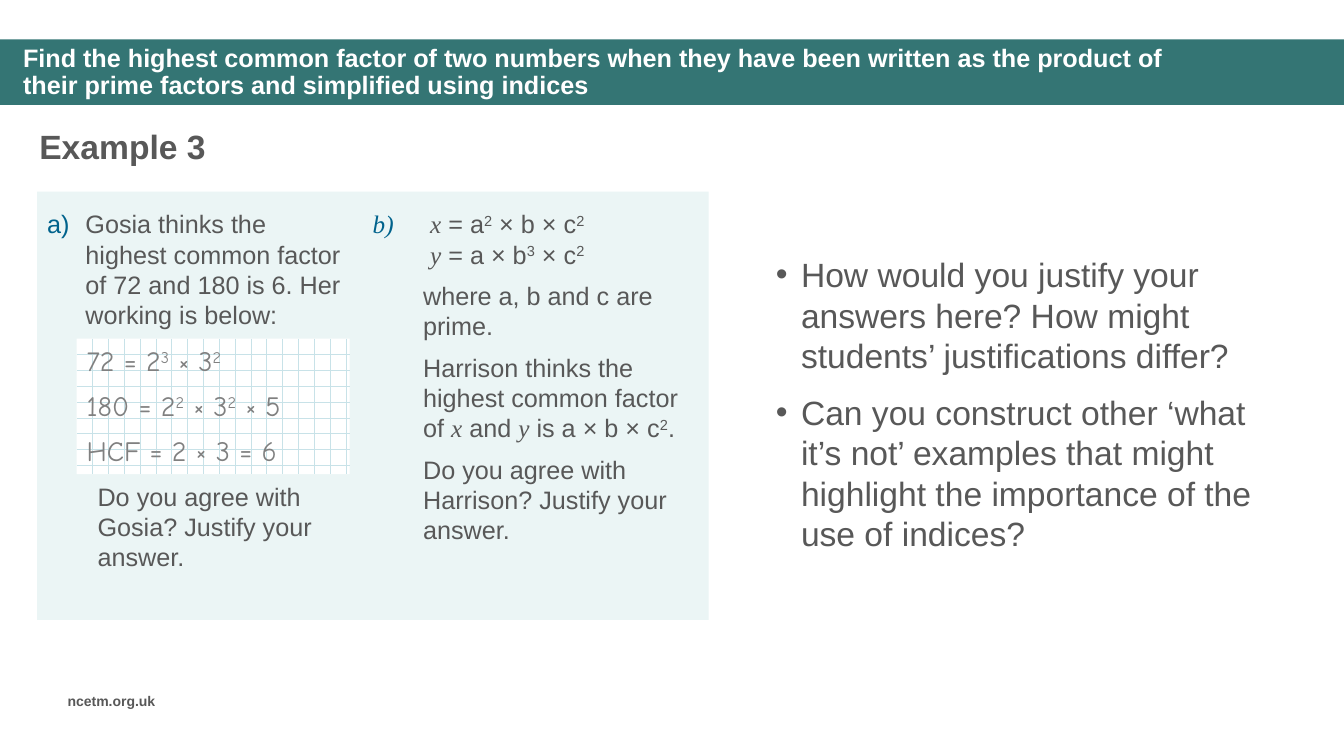
from dataclasses import dataclass

from lxml import etree
from pptx import Presentation
from pptx import util as u
from pptx.dml.color import RGBColor
from pptx.enum import dml, shapes, text
from pptx.oxml.ns import qn

COLUMNS, ROWS = 128, 72
WIDTH, HEIGHT = u.Inches(13.33), u.Inches(7.5)
GREY, TEAL, PALE, LABEL = "585858", "347574", "EBF5F5", "00628C"


@dataclass
class Box:
    """A rectangle in grid columns and rows."""
    left: float
    top: float
    width: float
    height: float

    def within(self, left, top, width, height):
        """Return a box placed relative to this one."""
        return Box(self.left + left, self.top + top, width, height)

    def lengths(self):
        """Return left, top, width and height in slide units."""
        column, row = WIDTH / COLUMNS, HEIGHT / ROWS
        return [int(n) for n in (self.left * column, self.top * row,
                                 self.width * column, self.height * row)]


def colour(value):
    """Turn a hex string into a colour."""
    return RGBColor.from_string(value)


def add_block(slide, box, fill):
    """Add a plain rectangle and return it."""
    block = slide.shapes.add_shape(shapes.MSO_SHAPE.RECTANGLE, *box.lengths())
    block.shadow.inherit = False
    block.line.fill.background()
    block.fill.solid()
    block.fill.fore_color.rgb = colour(fill)
    return block


def add_frame(slide, box, anchor=text.MSO_ANCHOR.TOP):
    """Add a wrapping text box and return its frame."""
    frame = slide.shapes.add_textbox(*box.lengths()).text_frame
    frame.word_wrap = True
    frame.vertical_anchor = anchor
    return frame


def add_marker(paragraph, tag, marker_colour, **attributes):
    """Give a paragraph a bullet or an automatic letter."""
    properties = paragraph._p.get_or_add_pPr()
    holder = etree.SubElement(properties, qn("a:buClr"))
    etree.SubElement(holder, qn("a:srgbClr"), val=marker_colour)
    etree.SubElement(properties, qn("a:buFont"), typeface="Arial")
    etree.SubElement(properties, qn(tag), **attributes)


def write(frame, wording, size, ink=GREY, bold=False, face="Arial", indent=0,
          hanging=0, before=0, after=0, marker=None):
    """Write a paragraph; | splits runs, ^ raises one, ~ marks a variable."""
    first = not frame.paragraphs[0].runs
    paragraph = frame.paragraphs[0] if first else frame.add_paragraph()
    properties = paragraph._p.get_or_add_pPr()
    properties.set("marL", str(u.Inches(indent)))
    properties.set("indent", str(-u.Inches(hanging)))
    paragraph.alignment = text.PP_ALIGN.LEFT
    paragraph.space_before = u.Pt(0 if first else before)
    paragraph.space_after = u.Pt(after)
    if marker:
        add_marker(paragraph, **marker)
    font = paragraph.font
    font.name, font.size, font.bold = face, u.Pt(size), bold
    font.color.rgb = colour(ink)
    for piece in wording.split("|"):
        if piece == "\n":
            paragraph.add_line_break()
            continue
        run = paragraph.add_run()
        run.text = piece.lstrip("^~")
        if piece.startswith("^"):
            run.font._element.set("baseline", "30000")
        elif piece.startswith("~"):
            run.font.name, run.font.italic = "Times New Roman", True
    return paragraph


def letter(start):
    """Describe an automatic a), b) label."""
    return dict(tag="a:buAutoNum", marker_colour=LABEL,
                type="alphaLcParenR", startAt=str(start))


def add_header(slide, box):
    """Draw the title band."""
    add_block(slide, box, TEAL)
    frame = add_frame(slide, box.within(1.25, 0.95, 111.2, 4.5), text.MSO_ANCHOR.MIDDLE)
    title = write(frame, "Find the highest common factor of two numbers when they have been "
                  "written as the product of their prime factors and simplified using indices",
                  18, "FFFFFF", bold=True)
    title.line_spacing = 0.9


def add_working(slide, box):
    """Draw the squared paper with Gosia's working."""
    paper = add_block(slide, box, "FFFFFF")
    paper.fill.patterned()
    paper.fill.pattern = dml.MSO_PATTERN.DOTTED_GRID
    paper.fill.fore_color.rgb = colour("C8E2E8")
    paper.fill.back_color.rgb = colour("FFFFFF")
    frame = paper.text_frame
    frame.vertical_anchor = text.MSO_ANCHOR.TOP
    for working in ("72 = 2|^3| × 3|^2", "180 = 2|^2| × 3|^2| × 5", "HCF = 2 × 3 = 6"):
        write(frame, working, 20, "808080", face="Comic Neue", before=4, after=4)


def add_gosia(slide, box):
    """Write question a."""
    task = add_frame(slide, box)
    write(task, "Gosia thinks the highest common factor of 72 and 180 is 6. "
          "Her working is below:", 18, indent=0.38, hanging=0.38, after=4, marker=letter(1))
    add_working(slide, box.within(3.75, 12.85, 26, 12.9))
    question = add_frame(slide, box.within(0, 25.95, box.width, 10.4))
    write(question, "Do you agree with Gosia? Justify your answer.", 18, indent=0.5)


def add_harrison(slide, box):
    """Write question b."""
    frame = add_frame(slide, box)
    write(frame, "~x| = a|^2| × b × c|^2|\n|~y| = a × b|^3| × c|^2", 18,
          indent=0.57, hanging=0.57, after=4, marker=letter(2))
    for wording in ("where a, b and c are prime.",
                    "Harrison thinks the highest common factor of |~x| and |~y"
                    "| is a × b × c|^2|.",
                    "Do you agree with Harrison? Justify your answer."):
        write(frame, wording, 18, indent=0.5, before=4, after=4)


def add_example(slide, box):
    """Draw the pale panel with both questions."""
    add_block(slide, box, PALE)
    add_gosia(slide, box.within(0, 1.15, 31, 36.4))
    add_harrison(slide, box.within(31, 1.15, 32.25, 33.3))


def add_questions(slide, box):
    """Write the discussion points."""
    frame = add_frame(slide, box, text.MSO_ANCHOR.MIDDLE)
    for wording in ("How would you justify your answers here? "
                    "How might students’ justifications differ?",
                    "Can you construct other ‘what it’s not’ examples that might "
                    "highlight the importance of the use of indices?"):
        write(frame, wording, 24, indent=0.39, hanging=0.25, after=12,
              marker=dict(tag="a:buChar", marker_colour=GREY, char="•"))


def main():
    """Build and save the slide."""
    deck = Presentation()
    deck.slide_width, deck.slide_height = WIDTH, HEIGHT
    slide = deck.slides.add_slide(deck.slide_layouts[6])
    page = Box(0, 0, COLUMNS, ROWS)
    add_header(slide, page.within(0, 3.75, COLUMNS, 6.25))
    write(add_frame(slide, page.within(2.8, 11.5, 64, 4.8)), "Example 3", 24, bold=True)
    add_example(slide, page.within(3.55, 18.25, 63.95, 40.8))
    add_questions(slide, page.within(71.6, 18.25, 51.4, 40.4))
    write(add_frame(slide, page.within(5.5, 65.5, 11.6, 2.6)), "ncetm.org.uk", 10, bold=True)
    deck.save("out.pptx")


if __name__ == "__main__":
    main()
